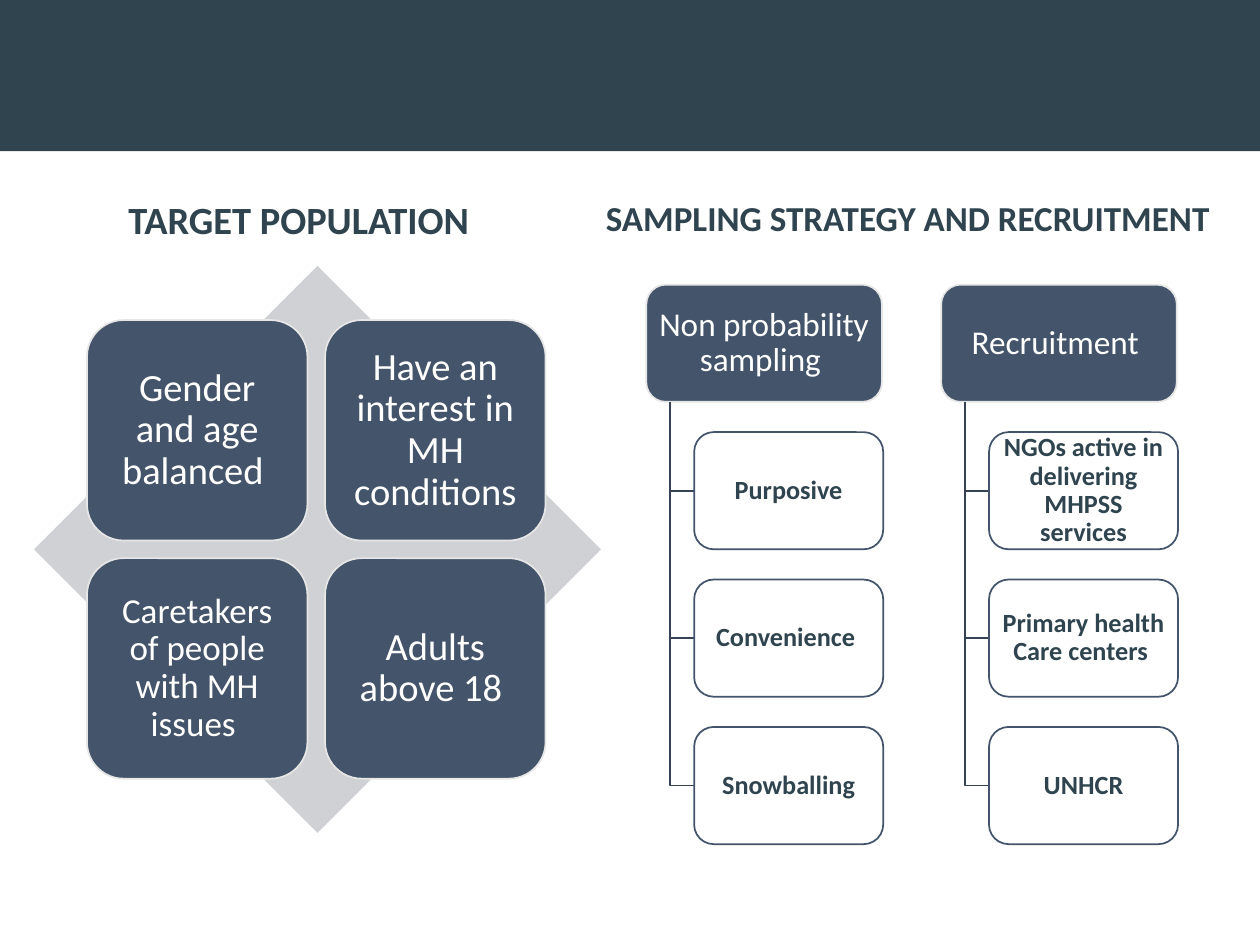
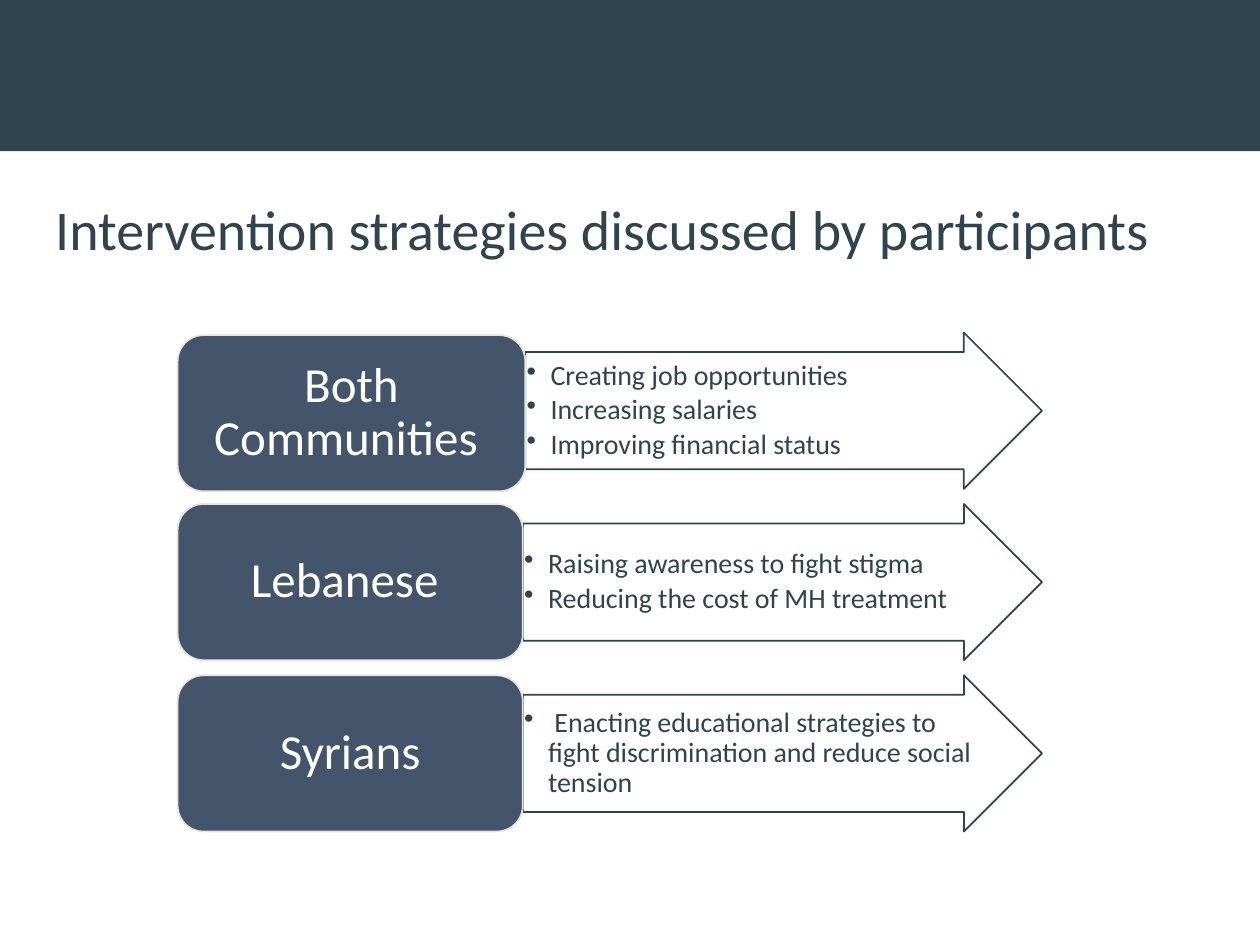
from lxml import etree
from pptx import Presentation
from pptx.dml.color import RGBColor
from pptx.enum import shapes, text
from pptx.oxml.ns import qn
from pptx.util import Inches, Pt

FONT = "Calibri"
DEEP, SLATE, PALE = "2F444E", "44546A", "E7E6E6"
DIAMOND, BRANCH, WHITE = "CFD1D4", "364355", "FFFFFF"
KIND = shapes.MSO_SHAPE
CENTER = text.PP_ALIGN.CENTER
LEFT = text.PP_ALIGN.LEFT
MIDDLE = text.MSO_ANCHOR.MIDDLE
TOP = text.MSO_ANCHOR.TOP


def rgb(hex_color):
    return RGBColor.from_string(hex_color)


def add_bullet(paragraph, indent):
    """Give the paragraph a round bullet with a hanging indent in inches."""
    props = paragraph._p.get_or_add_pPr()
    props.set("marL", str(Inches(indent)))
    props.set("indent", str(-Inches(indent)))
    etree.SubElement(props, qn("a:buChar")).set("char", "•")


def write(holder, lines, size, color=DEEP, bold=False, align=LEFT, anchor=TOP,
          insets=(0.1, 0.05), spacing=1.0, after=0, bullet=0, wrap=True):
    """Fill a shape with one paragraph per line; insets are (side, top and bottom)."""
    frame = holder.text_frame
    frame.word_wrap = wrap
    frame.vertical_anchor = anchor
    frame.margin_left = frame.margin_right = Inches(insets[0])
    frame.margin_top = frame.margin_bottom = Inches(insets[1])
    for index, line in enumerate(lines):
        paragraph = frame.add_paragraph() if index else frame.paragraphs[0]
        paragraph.alignment = align
        paragraph.line_spacing = spacing
        paragraph.space_after = Pt(after)
        if bullet:
            add_bullet(paragraph, bullet)
        run = paragraph.add_run()
        run.text = line
        run.font.name, run.font.size, run.font.bold = FONT, Pt(size), bold
        run.font.color.rgb = rgb(color)


class Deck:
    """Holds the shared style and the slide being built."""

    def __init__(self):
        self.file = Presentation()
        self.file.slide_width, self.file.slide_height = Inches(10), Inches(7.5)
        self.slide = None

    def new_slide(self):
        self.slide = self.file.slides.add_slide(self.file.slide_layouts[6])
        self.shape(KIND.RECTANGLE, 0, 0, 10, 1.2, fill=DEEP)

    def paint(self, shape, fill, line):
        shape.shadow.inherit = False
        if fill:
            shape.fill.solid()
            shape.fill.fore_color.rgb = rgb(fill)
        else:
            shape.fill.background()
        if line:
            shape.line.color.rgb = rgb(line)
            shape.line.width = Pt(1)
        else:
            shape.line.fill.background()
        return shape

    def shape(self, kind, x, y, width, height, fill=None, line=None, adjust=()):
        shape = self.slide.shapes.add_shape(
            kind, Inches(x), Inches(y), Inches(width), Inches(height))
        for index, value in enumerate(adjust):
            shape.adjustments[index] = value
        return self.paint(shape, fill, line)

    def card(self, label, x, y, width, height, size, insets, fill=SLATE, line=PALE,
             color=WHITE, bold=False, corner=0.1667):
        card = self.shape(KIND.ROUNDED_RECTANGLE, x, y, width, height, fill, line, [corner])
        write(card, [label], size, color, bold, CENTER, MIDDLE, insets, 0.9)

    def heading(self, label, x, y, width, height, size, **style):
        box = self.slide.shapes.add_textbox(
            Inches(x), Inches(y), Inches(width), Inches(height))
        write(box, [label], size, **style)

    def branch(self, x, top, bottom, width):
        """Draw an elbow that goes down and then right."""
        pen = self.slide.shapes.build_freeform(Inches(x), Inches(top))
        pen.add_line_segments([(Inches(x), Inches(bottom)),
                               (Inches(x + width), Inches(bottom))], close=False)
        self.paint(pen.convert_to_shape(), None, BRANCH)

    def arrow(self, points, x, y, width, height):
        arrow = self.shape(KIND.RIGHT_ARROW, x, y, width, height, line=DEEP, adjust=[0.75, 0.5])
        write(arrow, points, 16, anchor=MIDDLE, insets=(0.01, 0.01),
              spacing=0.9, after=2.4, bullet=0.19)


def build_sampling(deck):
    deck.new_slide()
    deck.shape(KIND.DIAMOND, 0.27, 2.11, 4.5, 4.5, fill=DIAMOND)
    groups = [("Gender and age balanced ", 22), ("Have an interest in MH conditions", 22),
              ("Caretakers of people with MH issues ", 20), ("Adults above 18 ", 22)]
    for index, (group, size) in enumerate(groups):
        row, column = divmod(index, 2)
        inset = size / 250
        deck.card(group, 0.69 + 1.89 * column, 2.54 + 1.89 * row, 1.75, 1.75,
                  size, (inset, inset))
    deck.heading("TARGET POPULATION", 0.92, 1.51, 3.51, 0.47, 22, bold=True)
    deck.heading("SAMPLING STRATEGY AND RECRUITMENT", 4.71, 1.51, 5.04, 0.44, 20,
                 bold=True, wrap=False)

    methods = {
        "Non probability sampling ": ["Purposive", "Convenience ", "Snowballing"],
        "Recruitment ": ["NGOs active in delivering MHPSS services",
                         "Primary health Care centers ", "UNHCR"],
    }
    top, height, row_step, trunk = 2.26, 0.93, 1.17, 0.19
    for column, (method, options) in enumerate(methods.items()):
        x = 5.13 + 2.34 * column
        deck.card(method, x, top, 1.87, height, 19, (0.04, 0.03))
        for row, option in enumerate(options, 1):
            y = top + row_step * row
            deck.branch(x + trunk, top + height, y + height / 2, trunk)
            deck.card(option, x + 2 * trunk, y, 1.5, height, 15, (0.03, 0.02),
                      fill=None, line=SLATE, color=DEEP, bold=True)


def build_interventions(deck):
    deck.new_slide()
    deck.heading("Intervention strategies discussed by participants",
                 0.34, 1.55, 9.04, 0.58, 32, anchor=MIDDLE, spacing=0.9)
    strategies = [
        ("Both Communities ", 2.66, 2.76, ["Creating job opportunities", "Increasing salaries",
                                           "Improving financial status"]),
        ("Lebanese ", 4, 2.74, ["Raising awareness to fight stigma",
                                "Reducing the cost of MH treatment"]),
        ("Syrians", 5.36, 2.74, [" Enacting educational strategies to fight discrimination "
                                 "and reduce social tension"]),
    ]
    left, right, height = 1.41, 8.27, 1.24
    for row, (community, y, width, points) in enumerate(strategies):
        start = left + width
        deck.arrow(points, start, 2.64 + 1.36 * row, right - start, height)
        deck.card(community, left, y, width, height, 28, (0.12, 0.06))


def main():
    deck = Deck()
    build_sampling(deck)
    build_interventions(deck)
    deck.file.save("out.pptx")


if __name__ == "__main__":
    main()
